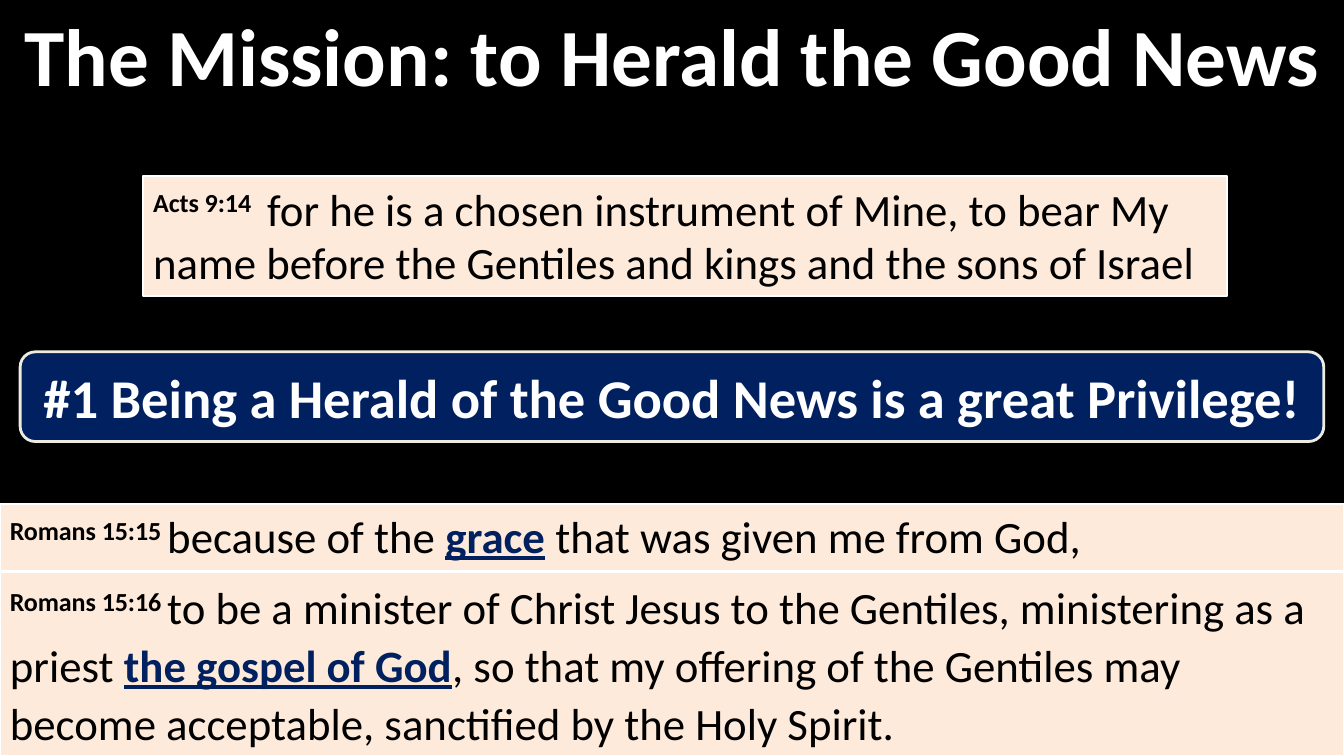
from dataclasses import dataclass

from pptx import Presentation
from pptx.dml.color import RGBColor
from pptx.enum.shapes import MSO_SHAPE
from pptx.enum.text import MSO_ANCHOR, MSO_AUTO_SIZE, PP_ALIGN
from pptx.util import Inches, Pt

RECT = MSO_SHAPE.RECTANGLE
CALLOUT = MSO_SHAPE.ROUNDED_RECTANGULAR_CALLOUT
TOP, MIDDLE = MSO_ANCHOR.TOP, MSO_ANCHOR.MIDDLE
LEFT, CENTER = PP_ALIGN.LEFT, PP_ALIGN.CENTER
NO_FIT = MSO_AUTO_SIZE.NONE


@dataclass(frozen=True)
class Theme:
    font: str = "Calibri"
    black: RGBColor = RGBColor(0x00, 0x00, 0x00)
    white: RGBColor = RGBColor(0xFF, 0xFF, 0xFF)
    navy: RGBColor = RGBColor(0x00, 0x20, 0x60)
    peach: RGBColor = RGBColor(0xFD, 0xEA, 0xDA)
    cream: RGBColor = RGBColor(0xEE, 0xEC, 0xE1)
    title: int = 58
    point: int = 39
    verse: int = 32


theme = Theme()


def write(par, text, size=theme.verse, color=theme.black, bold=False,
          under=False, raised=False):
    run = par.add_run()
    run.text = text
    font = run.font
    font.name, font.size = theme.font, Pt(size)
    font.bold, font.underline = bold, under
    font.color.rgb = color
    if raised:
        run._r.get_or_add_rPr().set("baseline", "30000")


def add_box(kind, place, fill, edge, width, anchor=TOP, align=LEFT):
    """Draw a filled box and return it with its first paragraph."""
    box = slide.shapes.add_shape(kind, *map(Inches, place))
    box.shadow.inherit = False
    box.fill.solid()
    box.fill.fore_color.rgb = fill
    box.line.color.rgb = edge
    box.line.width = Pt(width)
    frame = box.text_frame
    frame.word_wrap = True
    frame.vertical_anchor = anchor
    par = frame.paragraphs[0]
    par.alignment = align
    return box, par


deck = Presentation()
deck.slide_width, deck.slide_height = Inches(13.33), Inches(7.5)
slide = deck.slides.add_slide(deck.slide_layouts[5])
slide.background.fill.solid()
slide.background.fill.fore_color.rgb = theme.black

# Title
title = slide.shapes.title
title.left, title.top = Inches(0), Inches(0)
title.width, title.height = Inches(13.33), Inches(1.08)
frame = title.text_frame
frame.word_wrap = True
frame.auto_size = NO_FIT
frame.vertical_anchor = MIDDLE
head = frame.paragraphs[0]
head.alignment = CENTER
write(head, "The Mission: to Herald the Good News",
      size=theme.title, color=theme.white, bold=True)

# Verses: place, line spacing, reference, text before, key words, text after
verses = [
    ((0, 5.67, 13.33, 1.83), 1.07, "Romans 15:16 ",
     "to be a minister of Christ Jesus to the Gentiles, ministering as a priest ",
     "the gospel of God",
     ", so that my offering of the Gentiles may become acceptable, "
     "sanctified by the Holy Spirit."),
    ((0, 5, 13.33, 0.67), 1.0, "Romans 15:15 ",
     "because of the ", "grace", " that was given me from God,"),
    ((1.42, 1.75, 10.75, 1.19), 1.0, "Acts 9:14 ",
     " for he is a chosen instrument of Mine, to bear My name before "
     "the Gentiles and kings and the sons of Israel", "", ""),
]
for place, space, ref, lead, key, rest in verses:
    box, par = add_box(RECT, place, theme.peach, theme.white, 1.5)
    par.line_spacing = space
    write(par, ref, bold=True, raised=True)
    write(par, lead)
    if key:
        write(par, key, color=theme.navy, bold=True, under=True)
        write(par, rest)

# Main point
point, par = add_box(CALLOUT, (0.2, 3.49, 12.93, 0.89), theme.navy,
                     theme.cream, 2, MIDDLE, CENTER)
for i, value in enumerate((-0.22, 0.5, 0.17)):
    point.adjustments[i] = value
write(par, "#1 Being a Herald of the Good News is a great Privilege!",
      size=theme.point, color=theme.white, bold=True)

deck.save("out.pptx")
